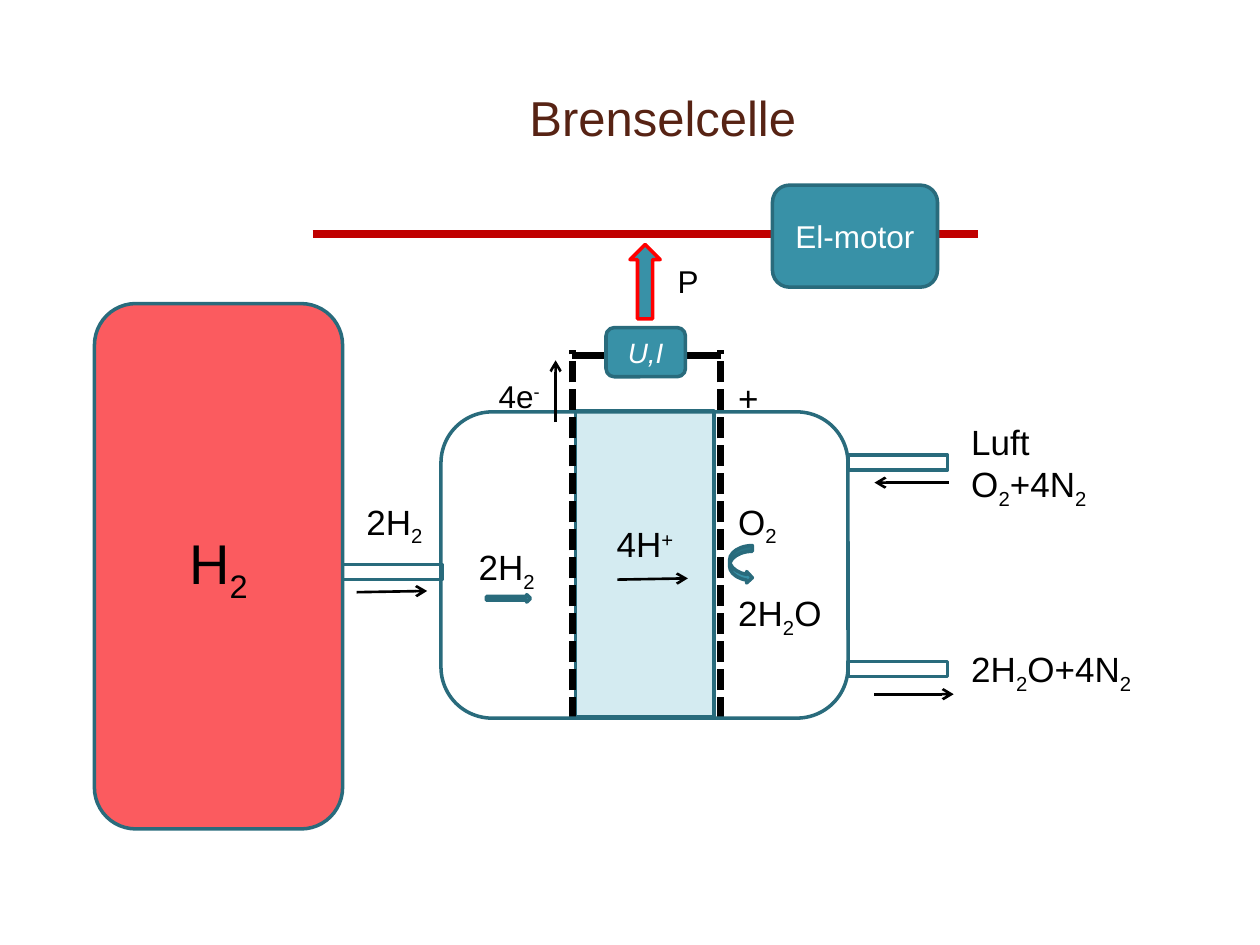
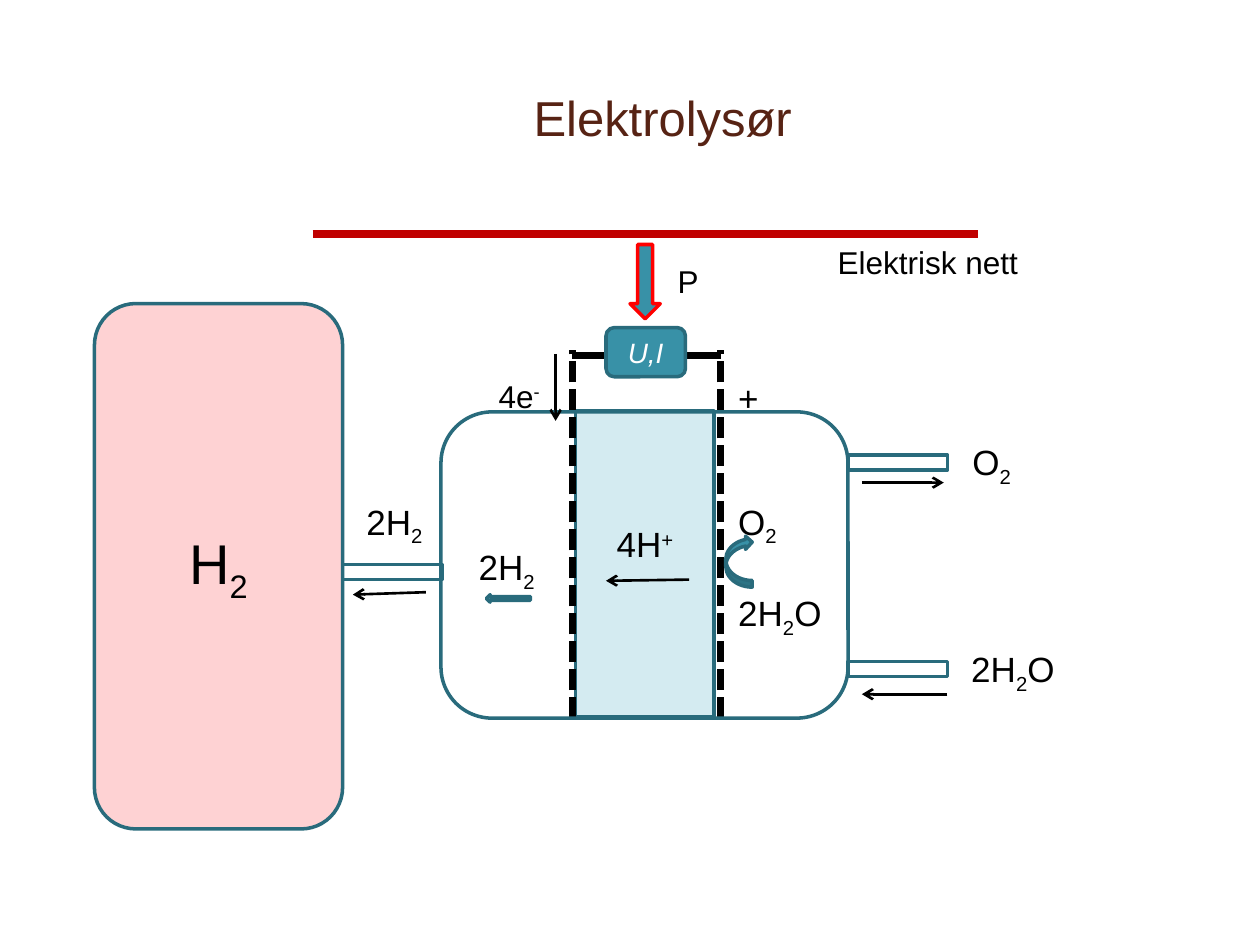
from lxml import etree
from pptx import Presentation
from pptx.dml.color import RGBColor
from pptx.enum.dml import MSO_LINE
from pptx.enum.shapes import MSO_CONNECTOR, MSO_SHAPE
from pptx.enum.text import MSO_ANCHOR, MSO_AUTO_SIZE, PP_ALIGN
from pptx.oxml.ns import qn
from pptx.util import Pt

RECT = MSO_SHAPE.RECTANGLE
ROUND_RECT = MSO_SHAPE.ROUNDED_RECTANGLE
UP_ARROW = MSO_SHAPE.UP_ARROW
RIGHT_ARROW = MSO_SHAPE.RIGHT_ARROW
CURVED_ARROW = MSO_SHAPE.CURVED_RIGHT_ARROW
STRAIGHT = MSO_CONNECTOR.STRAIGHT
DASH = MSO_LINE.SQUARE_DOT
CENTER, LEFT = PP_ALIGN.CENTER, PP_ALIGN.LEFT
MIDDLE = MSO_ANCHOR.MIDDLE
GROW = MSO_AUTO_SIZE.SHAPE_TO_FIT_TEXT

BLACK = RGBColor(0x00, 0x00, 0x00)
WHITE = RGBColor(0xFF, 0xFF, 0xFF)
BROWN = RGBColor(0x57, 0x23, 0x14)
TEAL = RGBColor(0x38, 0x91, 0xA7)
DARK_TEAL = RGBColor(0x29, 0x6B, 0x7C)
PALE_TEAL = RGBColor(0xD4, 0xEB, 0xF1)
RED = RGBColor(0xFF, 0x00, 0x00)
DARK_RED = RGBColor(0xC0, 0x00, 0x00)
FULL_TANK = RGBColor(0xFB, 0x5B, 0x5F)
PALE_TANK = RGBColor(0xFE, 0xD2, 0xD3)

FONT = "Arial"
SUBSCRIPT, SUPERSCRIPT = "-25000", "30000"
LINE_GAP = 25


class Diagram:
    """Draws styled elements on the current slide; _ and ^ in a text enclose lowered and raised parts."""

    def __init__(self):
        self.deck = Presentation()
        self.deck.slide_width, self.deck.slide_height = Pt(720), Pt(540)
        self.page = None

    def new_page(self, title):
        self.page = self.deck.slides.add_slide(self.deck.slide_layouts[6])
        box = self.page.shapes.add_textbox(Pt(54), Pt(21.6), Pt(649.4), Pt(90))
        box.text_frame.word_wrap = True
        box.text_frame.vertical_anchor = MIDDLE
        self.add_spans(box.text_frame.paragraphs[0], title, 28, BROWN, CENTER)

    def add_spans(self, para, text, size, color=BLACK, align=LEFT, italic=False):
        para.alignment = align
        mark, shift = ("^", SUPERSCRIPT) if "^" in text else ("_", SUBSCRIPT)
        for index, piece in enumerate(text.split(mark)):
            if not piece:
                continue
            span = para.add_run()
            span.text = piece
            font = span.font
            font.name, font.size, font.italic = FONT, Pt(size), italic
            font.color.rgb = color
            if index % 2:
                font._element.set("baseline", shift)

    def label(self, place, *lines, size=20, gap=0):
        box = self.page.shapes.add_textbox(*map(Pt, place))
        frame = box.text_frame
        frame.word_wrap = False
        frame.auto_size = GROW
        for index, line in enumerate(lines):
            para = frame.add_paragraph() if index else frame.paragraphs[0]
            if index and gap:
                para.space_before = Pt(gap)
            self.add_spans(para, line, size)

    def shape(self, kind, place, fill=None, line=DARK_TEAL, turn=0, flip=False):
        shape = self.page.shapes.add_shape(kind, *map(Pt, place))
        shape.shadow.inherit = False
        shape.rotation = turn
        if flip:
            shape._element.spPr.xfrm.set("flipV", "1")
        if fill is None:
            shape.fill.background()
        else:
            shape.fill.solid()
            shape.fill.fore_color.rgb = fill
        shape.line.color.rgb = line
        shape.line.width = Pt(2)
        return shape

    def block(self, kind, place, fill, text, size, color=BLACK, italic=False, lift=0):
        frame = self.shape(kind, place, fill).text_frame
        frame.word_wrap = True
        frame.vertical_anchor = MIDDLE
        frame.margin_bottom = Pt(3.6 + lift)
        self.add_spans(frame.paragraphs[0], text, size, color, CENTER, italic)

    def line(self, ends, color=BLACK, width=4.0, dash=None, arrow=False):
        connector = self.page.shapes.add_connector(STRAIGHT, *map(Pt, ends))
        connector.line.color.rgb = color
        connector.line.width = Pt(width)
        if dash:
            connector.line.dash_style = dash
        properties = connector._element.spPr
        if arrow:
            outline = properties.find(qn("a:ln"))
            etree.SubElement(outline, qn("a:tailEnd"), type="arrow")
        etree.SubElement(properties, qn("a:effectLst"))

    def cell(self, title, tank_fill, flows, swirl, reverse=False):
        turn = 180 if reverse else 0
        self.new_page(title)
        self.block(RECT, (329, 234.7, 79.2, 175), PALE_TEAL, "4H^+", 20, lift=23)
        for electrode in (326.9, 411.8):
            self.line((electrode, 410.4, electrode, 200.2), dash=DASH)
        self.line((326.9, 203, 411.8, 203))
        self.block(ROUND_RECT, (346.3, 187.2, 45.4, 28.1), TEAL, "U,I", 16, WHITE, True)
        self.shape(ROUND_RECT, (252, 235.4, 232.6, 175))
        self.block(ROUND_RECT, (54, 173.5, 141.8, 300.2), tank_fill, "H_2", 32)
        for left, top in ((195.8, 322.6), (484.6, 378), (484.6, 259.9)):
            self.shape(RECT, (left, top, 56.9, 8.6))
        for ends in flows:
            self.line(ends, width=1.5, arrow=True)
        self.label((266.4, 308.2, 47.5, 31.7), "2H_2")
        self.label((202.3, 282.2, 47.5, 31.7), "2H_2")
        self.label((414.7, 282.2, 63.4, 79.9), "O_2", "2H_2_O", gap=LINE_GAP)
        self.label((414.7, 211.7, 25.9, 31.7), "+")
        self.label((277.9, 211.7, 38.9, 28.8), "4e^-", size=18)
        self.shape(CURVED_ARROW, swirl, TEAL, flip=reverse)
        self.shape(RIGHT_ARROW, (277.9, 339.8, 25.2, 4.3), TEAL, turn=turn)
        self.line((178.6, 133.9, 558.7, 133.9), DARK_RED, 4.5)
        self.shape(UP_ARROW, (360, 139.7, 17.3, 42.5), TEAL, RED, turn)
        self.label((380.2, 146.2, 26.6, 28.8), "P", size=18)


def main():
    diagram = Diagram()

    fuel_cell_flows = (
        (352.8, 331.2, 393.1, 330.5),
        (203.8, 338.4, 244.1, 337.7),
        (542.2, 275.8, 499.7, 275.8),
        (499.7, 396.7, 545, 396.7),
        (317.5, 241.2, 317.5, 205.9),
    )
    diagram.cell("Brenselcelle", FULL_TANK, fuel_cell_flows, (416.9, 311.8, 13, 21.6))
    diagram.label((547.9, 236.9, 82.8, 55.4), "Luft", "O_2_+4N_2")
    diagram.label((547.9, 366.5, 108.7, 31.7), "2H_2_O+4N_2")
    diagram.block(ROUND_RECT, (441.4, 105.8, 94.3, 58.3), TEAL, "El-motor", 18, WHITE)

    electrolyser_flows = (
        (393.8, 331.2, 346.3, 331.9),
        (243.4, 338.4, 201.6, 339.8),
        (492.5, 275.8, 539.3, 275.8),
        (541.4, 396.7, 492.5, 396.7),
        (317.5, 202.3, 317.5, 240.5),
    )
    diagram.cell("Elektrolysør", PALE_TANK, electrolyser_flows, (414.7, 306, 15.1, 29.5), True)
    diagram.label((548.6, 248.4, 37.4, 31.7), "O_2")
    diagram.label((547.9, 366.5, 63.4, 31.7), "2H_2_O")
    diagram.label((471.6, 135.4, 118.8, 28.8), "Elektrisk nett", size=18)

    diagram.deck.save("out.pptx")


if __name__ == "__main__":
    main()
